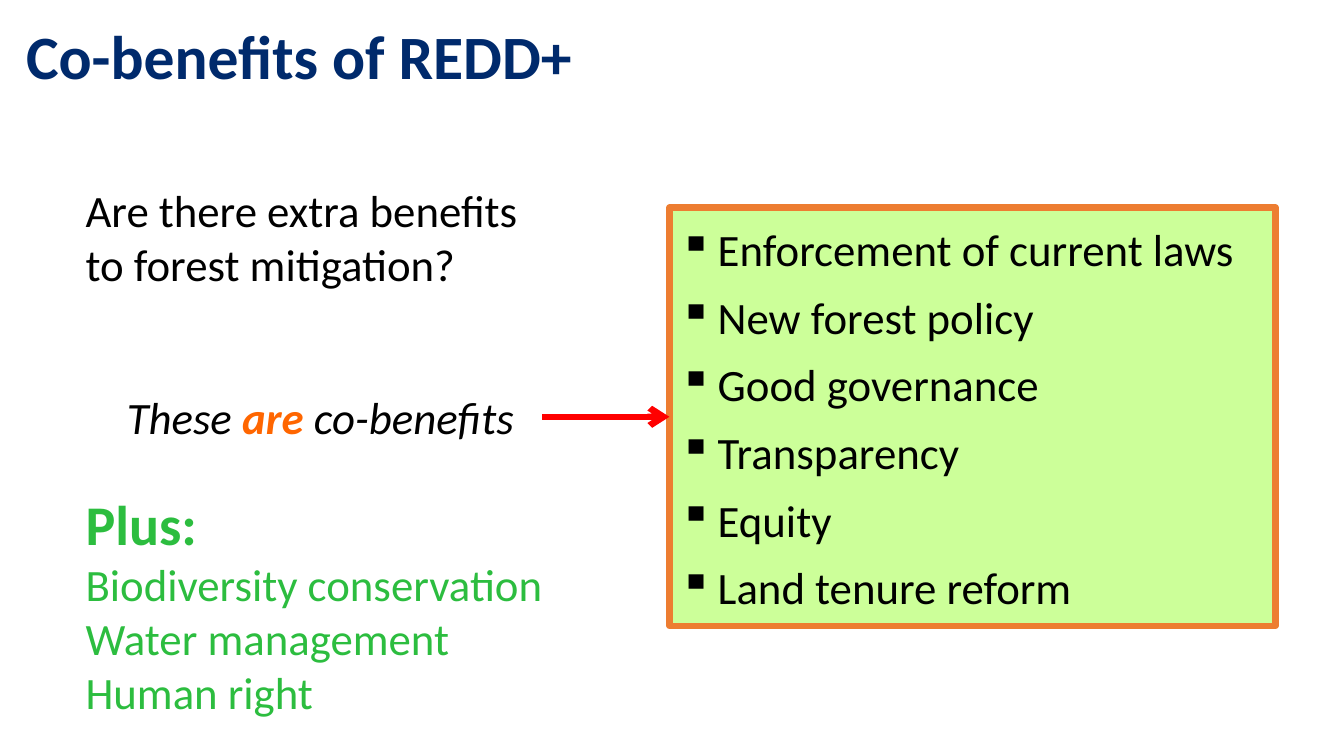
"""Build the slide on the co-benefits of REDD+."""
from lxml import etree
from pptx import Presentation
from pptx import util as u
from pptx.dml.color import RGBColor
from pptx.enum import shapes, text
from pptx.oxml import ns

NAVY = RGBColor(0x00, 0x2A, 0x6C)
BLACK = RGBColor(0x00, 0x00, 0x00)
ORANGE = RGBColor(0xFF, 0x66, 0x00)
GREEN = RGBColor(0x2C, 0xBD, 0x3F)
LIME = RGBColor(0xCC, 0xFF, 0x99)
RUST = RGBColor(0xED, 0x7D, 0x31)
RED = RGBColor(0xFF, 0x00, 0x00)

deck = Presentation()
deck.slide_width, deck.slide_height = u.Inches(13.33), u.Inches(7.5)
slide = deck.slides.add_slide(deck.slide_layouts[6])


def place(left, top, width, height):
    """Turn percentages of the slide into lengths."""
    across, down = deck.slide_width / 100, deck.slide_height / 100
    return [round(n) for n in (left * across, top * down, width * across, height * down)]


def write(paragraph, words, color, size=32, **styles):
    """Add a run with its format to a paragraph."""
    run = paragraph.add_run()
    run.text = words
    run.font.color.rgb = color
    for key, value in dict(name="Calibri", size=u.Pt(size), **styles).items():
        setattr(run.font, key, value)


boxes = {}
for part, area, anchor in [
    ("title", (1.2, 0, 97.45, 15.73), text.MSO_ANCHOR.MIDDLE),
    ("question", (5.63, 18.27, 36.61, 26.13), text.MSO_ANCHOR.MIDDLE),
    ("answer", (8.7, 50.87, 31.66, 8.53), text.MSO_ANCHOR.TOP),
    ("extras", (5.63, 64.13, 38.56, 31.87), text.MSO_ANCHOR.TOP),
]:
    boxes[part] = slide.shapes.add_textbox(*place(*area))
    boxes[part].text_frame.word_wrap = True
    boxes[part].text_frame.vertical_anchor = anchor

heading = boxes["title"].text_frame.paragraphs[0]
heading.line_spacing = 0.9
write(heading, "Co-benefits of REDD+", NAVY, 44, bold=True)
write(boxes["question"].text_frame.paragraphs[0],
      "Are there extra benefits to forest mitigation?", BLACK)

for words, color, bold in [("These ", BLACK, False), ("are ", ORANGE, True),
                           ("co-benefits", BLACK, False)]:
    write(boxes["answer"].text_frame.paragraphs[0], words, color, italic=True, bold=bold)

extras = boxes["extras"].text_frame
write(extras.paragraphs[0], "Plus:", GREEN, 40, bold=True)
for extra in ["Biodiversity conservation", "Water management", "Human right"]:
    write(extras.add_paragraph(), extra, GREEN)

benefits = slide.shapes.add_shape(shapes.MSO_SHAPE.RECTANGLE,
                                  *place(49.81, 27.47, 45.09, 55.33))
benefits.shadow.inherit = False
benefits.fill.solid()
benefits.fill.fore_color.rgb = LIME
benefits.line.color.rgb = RUST
benefits.line.width = u.Pt(4.5)
benefit_list = benefits.text_frame
benefit_list.word_wrap = True
benefit_list.vertical_anchor = text.MSO_ANCHOR.TOP
benefit_list.margin_top = u.Inches(0.09)

for row, benefit in enumerate([
    "Enforcement of current laws", "New forest policy", "Good governance",
    "Transparency", "Equity", "Land tenure reform",
]):
    item = benefit_list.add_paragraph() if row else benefit_list.paragraphs[0]
    layout = item._p.get_or_add_pPr()
    indent = u.Inches(0.38)
    layout.set("marL", str(indent))
    layout.set("indent", str(-indent))
    etree.SubElement(layout, ns.qn("a:buChar")).set("char", "▪")
    for key, value in {"alignment": text.PP_ALIGN.LEFT, "line_spacing": 1.1,
                       "space_before": u.Pt(3 if row else 0),
                       "space_after": u.Pt(3)}.items():
        setattr(item, key, value)
    write(item, benefit, BLACK)

arrow = slide.shapes.add_connector(shapes.MSO_CONNECTOR.STRAIGHT, 0, 0, 0, 0)
arrow.begin_connect(boxes["answer"], 3)
arrow.end_connect(benefits, 1)
arrow.line.color.rgb = RED
arrow.line.width = u.Pt(4.5)
etree.SubElement(arrow.line._get_or_add_ln(), ns.qn("a:tailEnd")).set("type", "arrow")
etree.SubElement(arrow._element.spPr, ns.qn("a:effectLst"))

deck.save("out.pptx")
